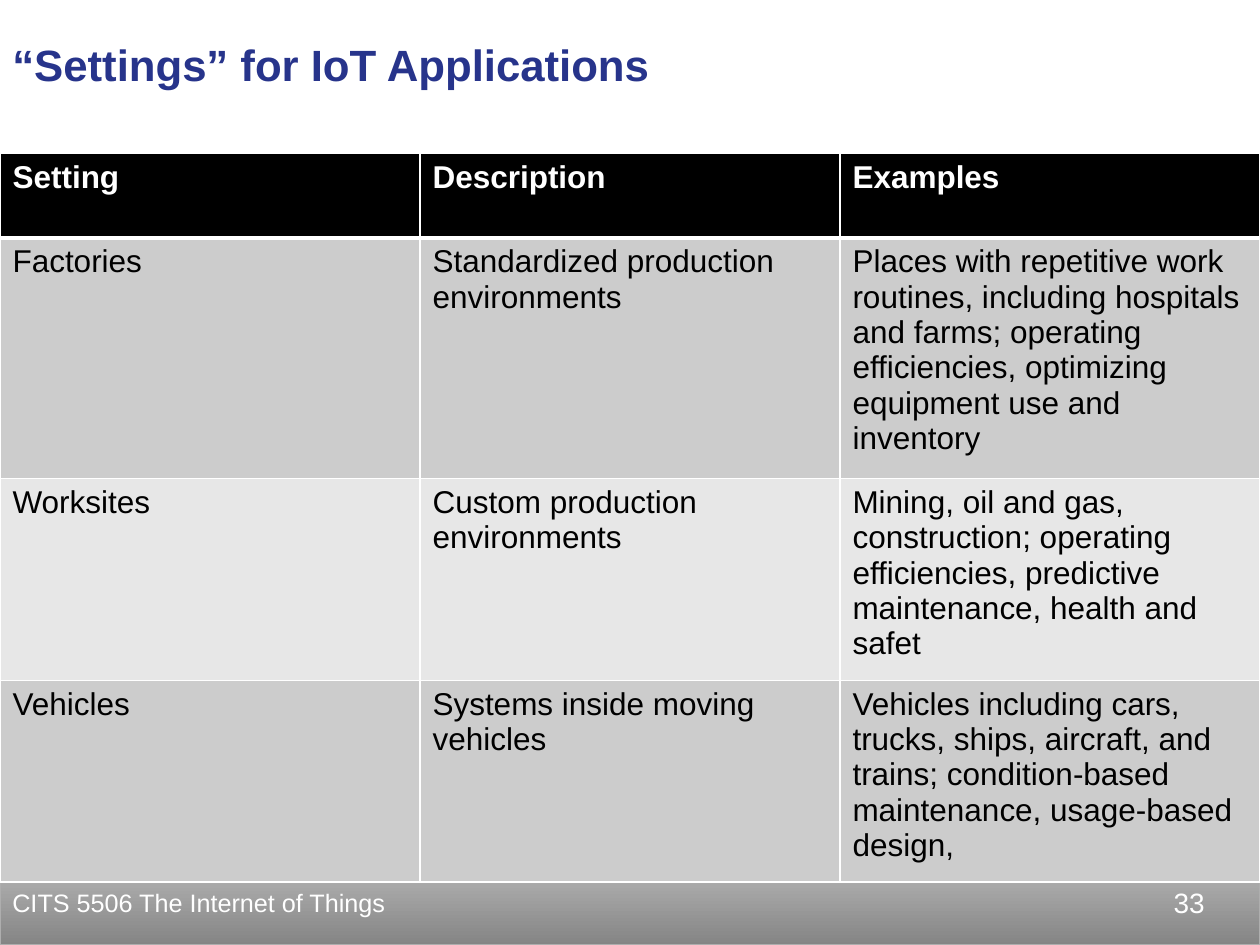
"""Build the slide on settings for IoT applications."""
from copy import deepcopy

from lxml import etree
from pptx import Presentation
from pptx.dml.color import RGBColor
from pptx.enum.shapes import MSO_SHAPE
from pptx.enum.text import MSO_ANCHOR, PP_ALIGN
from pptx.oxml.ns import qn
from pptx.util import Inches, Pt

RECTANGLE = MSO_SHAPE.RECTANGLE
TOP, MIDDLE = MSO_ANCHOR.TOP, MSO_ANCHOR.MIDDLE
LEFT, RIGHT = PP_ALIGN.LEFT, PP_ALIGN.RIGHT

COLOURS = {
    "white": "FFFFFF", "black": "000000", "title": "27348B",
    "background": "999999", "band_dark": "CCCCCC", "band_light": "E7E7E7",
    "bar_line": "AEAEAE",
}
BAR_STOPS = [("858585", 0), ("ACACAC", 0.8), ("ADADAD", 1)]
ROW_HEIGHTS = [0.67, 1.91, 1.5, 1.5]
ROWS = [
    ("Setting", "Description", "Examples"),
    ("Factories", "Standardized production environments",
     "Places with repetitive work routines, including hospitals and farms; "
     "operating efficiencies, optimizing equipment use and inventory"),
    ("Worksites", "Custom production environments",
     "Mining, oil and gas, construction; operating efficiencies, "
     "predictive maintenance, health and safet"),
    ("Vehicles", "Systems inside moving vehicles",
     "Vehicles including cars, trucks, ships, aircraft, and trains; "
     "condition-based maintenance, usage-based design,"),
]


def colour(name):
    return RGBColor.from_string(COLOURS[name])


def write(frame, text, size, shade, bold=False, align=LEFT, anchor=TOP):
    frame.word_wrap = True
    frame.vertical_anchor = anchor
    para = frame.paragraphs[0]
    para.alignment = align
    span = para.add_run()
    span.text = text
    for name, value in {"name": "Arial", "size": Pt(size), "bold": bold}.items():
        setattr(span.font, name, value)
    span.font.color.rgb = colour(shade)


deck = Presentation()
deck.slide_width, deck.slide_height = Inches(10), Inches(7.5)
page = deck.slides.add_slide(deck.slide_layouts[6])
page.background.fill.solid()
page.background.fill.fore_color.rgb = colour("background")

for left, top, width, height in [(-0.01, 0, 10.01, 1.23), (0, 1.25, 10, 5.94)]:
    panel = page.shapes.add_shape(
        RECTANGLE, Inches(left), Inches(top), Inches(width), Inches(height))
    panel.shadow.inherit = False
    panel.fill.solid()
    panel.fill.fore_color.rgb = colour("white")
    panel.line.fill.background()

bar = page.shapes.add_shape(
    RECTANGLE, Inches(0), Inches(6.83), Inches(10), Inches(0.67))
bar.shadow.inherit = False
bar.line.color.rgb = colour("bar_line")
bar.line.width = Pt(0.75)
bar.fill.gradient()
bar.fill.gradient_angle = 90
stop_list = bar.element.spPr.find(".//" + qn("a:gsLst"))
stop_list.append(deepcopy(stop_list[-1]))
for stop, (shade, position) in zip(bar.fill.gradient_stops, BAR_STOPS):
    stop.color.rgb = RGBColor.from_string(shade)
    stop.position = position
effects = bar.element.spPr.find(qn("a:effectLst"))
shadow = etree.SubElement(
    effects, qn("a:outerShdw"), blurRad=str(Pt(3.1)), dist=str(Pt(1.8)),
    dir="5400000", rotWithShape="0")
shadow_colour = etree.SubElement(shadow, qn("a:srgbClr"), val=COLOURS["black"])
etree.SubElement(shadow_colour, qn("a:alpha"), val="35000")
write(bar.text_frame, "CITS 5506 The Internet of Things", 14.4, "white",
      anchor=MIDDLE)

title = page.shapes.add_textbox(
    Inches(0), Inches(0.25), Inches(7.58), Inches(0.92))
write(title.text_frame, "“Settings” for IoT Applications", 25, "title", bold=True)

number = page.shapes.add_textbox(
    Inches(7.33), Inches(6.83), Inches(2.33), Inches(0.67))
write(number.text_frame, "33", 16, "white", align=RIGHT, anchor=MIDDLE)

table = page.shapes.add_table(
    len(ROWS), 3, Inches(0), Inches(1.22), Inches(10),
    Inches(sum(ROW_HEIGHTS))).table
for row_index, (texts, height) in enumerate(zip(ROWS, ROW_HEIGHTS)):
    table.rows[row_index].height = Inches(height)
    header = row_index == 0
    band = "black" if header else "band_dark" if row_index % 2 else "band_light"
    for column_index, text in enumerate(texts):
        cell = table.cell(row_index, column_index)
        write(cell.text_frame, text, 18, "white" if header else "black", header)
        properties = cell._tc.get_or_add_tcPr()
        widths = {"L": 1, "R": 1, "T": 3 if row_index == 1 else 1,
                  "B": 3 if header else 1}
        for side, points in widths.items():
            border = etree.SubElement(
                properties, qn(f"a:ln{side}"), w=str(Pt(points)))
            border_fill = etree.SubElement(border, qn("a:solidFill"))
            etree.SubElement(border_fill, qn("a:srgbClr"), val=COLOURS["white"])
        cell.fill.solid()
        cell.fill.fore_color.rgb = colour(band)

deck.save("out.pptx")
